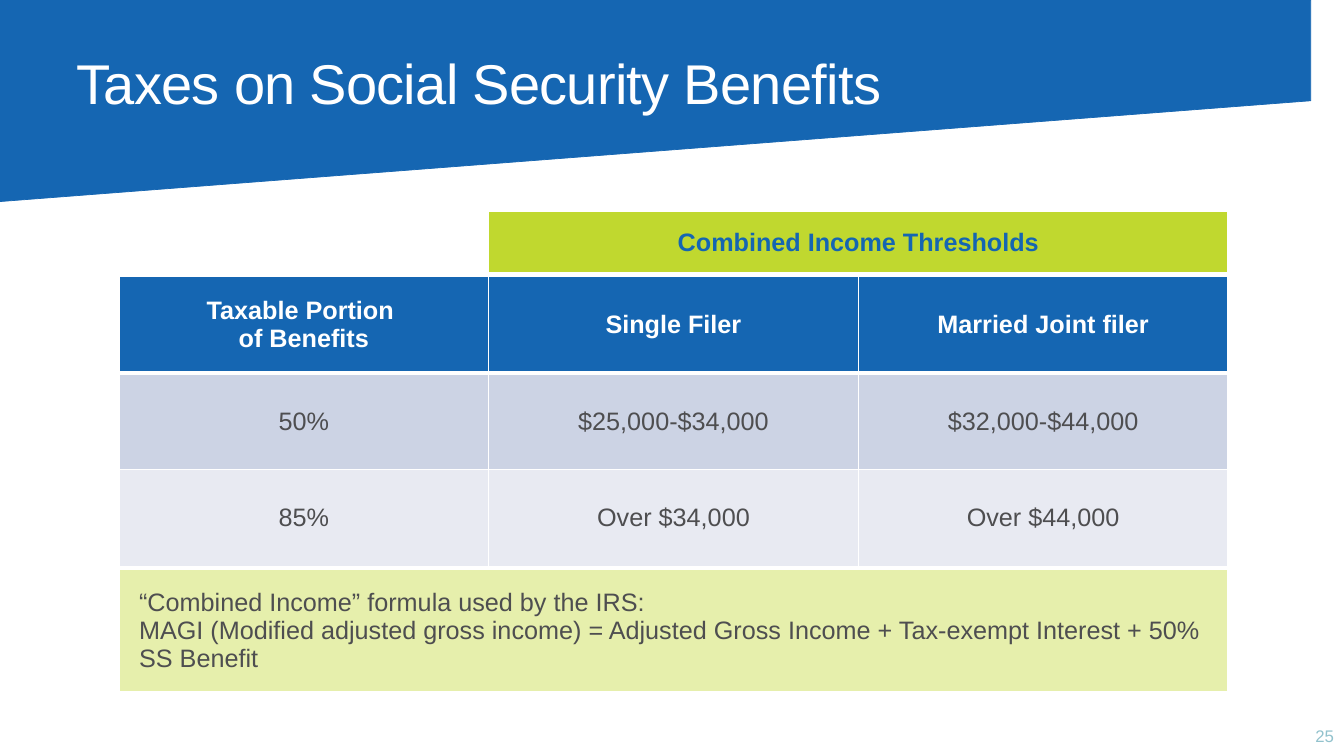
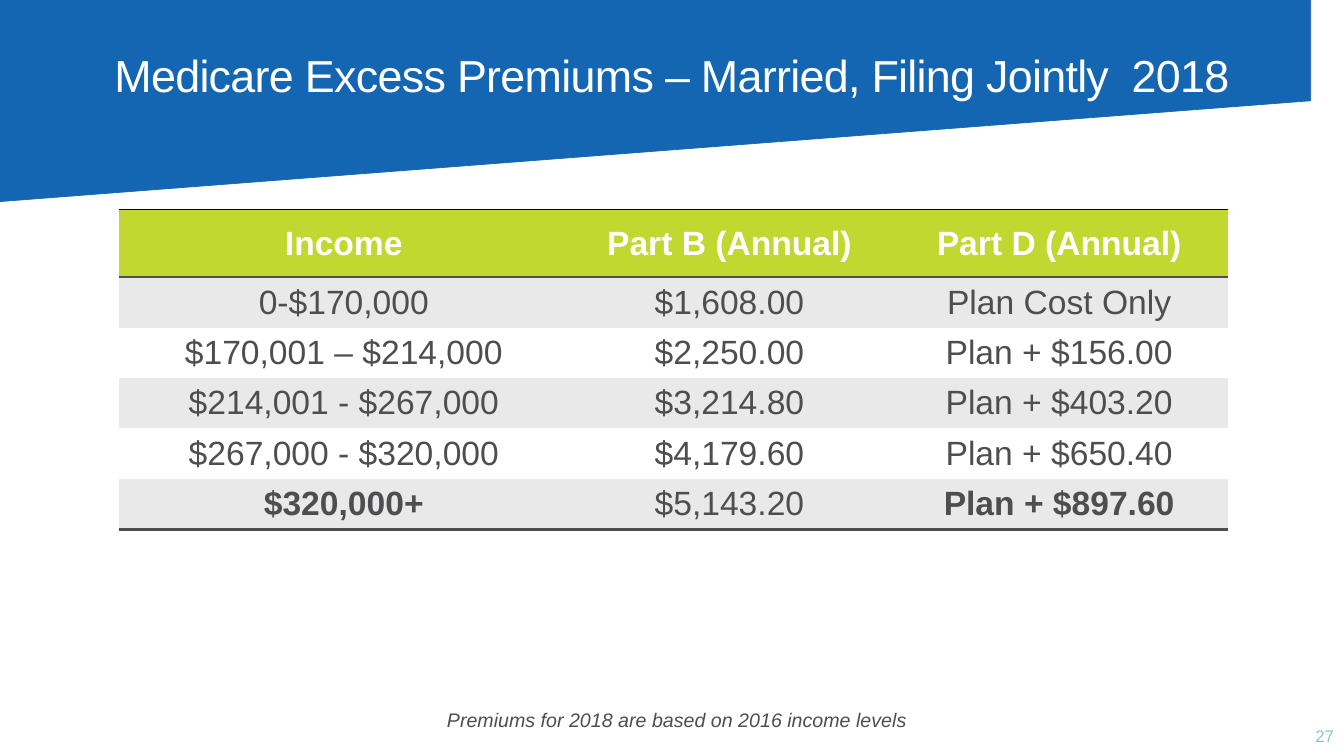
from lxml.etree import SubElement
from pptx import Presentation
from pptx.dml.color import RGBColor
from pptx.enum.text import MSO_ANCHOR as Anchor, MSO_AUTO_SIZE as AutoSize, PP_ALIGN as Align
from pptx.oxml.ns import qn
from pptx.util import Inches, Pt

BLUE = RGBColor(0x15, 0x66, 0xB2)
LIME = RGBColor(0xC0, 0xD8, 0x2F)
PALE_LIME = RGBColor(0xE6, 0xEF, 0xAC)
PALE_BLUE = RGBColor(0xCC, 0xD3, 0xE4)
PALER_BLUE = RGBColor(0xE8, 0xEA, 0xF2)
LIGHT_GRAY = RGBColor(0xE9, 0xE9, 0xE9)
DARK_GRAY = RGBColor(0x4E, 0x4E, 0x50)
PAGE_TEAL = RGBColor(0x92, 0xC2, 0xCD)
WHITE = RGBColor(0xFF, 0xFF, 0xFF)
BLACK = RGBColor(0, 0, 0)

FONT = "Arial"
SLIDE_W, SLIDE_H = 13.33, 7.5
TABLE_LEFT, TABLE_W = 1.18, 11
NO_GRID_STYLE = "{2D5ABB26-0587-4C30-8999-92F81FD0307C}"
WHITE_GRID = {"L": (WHITE, 1), "R": (WHITE, 1), "B": (WHITE, 1)}
WHITE_HEAD = WHITE_GRID | {"T": (WHITE, 1), "B": (WHITE, 3)}


def write(frame, text, size, color, align=Align.CENTER, bold=False, italic=False):
    """Fill a text frame and format all its paragraphs alike."""
    frame.word_wrap = True
    frame.text = text
    for paragraph in frame.paragraphs:
        paragraph.alignment = align
        font = paragraph.font
        font.name, font.size, font.bold, font.italic = FONT, Pt(size), bold, italic
        font.color.rgb = color


def add_text(slide, box, text, size, color, anchor=Anchor.TOP, **look):
    frame = slide.shapes.add_textbox(*map(Inches, box)).text_frame
    frame.vertical_anchor = anchor
    write(frame, text, size, color, **look)


def set_borders(cell, borders):
    """Draw the given sides, a dict of side letter to (colour, points)."""
    properties = cell._tc.get_or_add_tcPr()
    sides = [side for side in "LRTB" if side in borders]
    for position, side in enumerate(sides):
        color, width = borders[side]
        line = SubElement(properties, qn(f"a:ln{side}"), w=str(Pt(width)))
        fill = SubElement(line, qn("a:solidFill"))
        SubElement(fill, qn("a:srgbClr"), val=str(color))
        properties.insert(position, line)


def add_grid(slide, left, top, columns, row_heights, size):
    width, height = sum(columns), sum(row_heights)
    frame = slide.shapes.add_table(len(row_heights), len(columns),
                                   *map(Inches, (left, top, width, height)))
    table = frame.table
    table.first_row = table.horz_banding = False
    table._tbl.tblPr.find(qn("a:tableStyleId")).text = NO_GRID_STYLE
    for column, column_width in zip(table.columns, columns):
        column.width = Inches(column_width)
    for row, row_height in zip(table.rows, row_heights):
        row.height = Inches(row_height)

    def fill_row(index, texts, fill, color, borders, bold_columns=(),
                 align=Align.CENTER, margin=0.1):
        for number, text in enumerate(texts):
            cell = table.cell(index, number)
            cell.fill.solid()
            cell.fill.fore_color.rgb = fill
            cell.vertical_anchor = Anchor.MIDDLE
            cell.margin_left = Inches(margin)
            write(cell.text_frame, text, size, color, align, number in bold_columns)
            set_borders(cell, borders)

    return fill_row


def add_band(slide):
    """Draw the slanted band behind everything else."""
    builder = slide.shapes.build_freeform(0, 0, scale=Inches(1))
    builder.add_line_segments([(SLIDE_W, 0), (SLIDE_W, 1.27), (0, 1.65)])
    band = builder.convert_to_shape()
    band.shadow.inherit = False
    band.fill.solid()
    band.fill.fore_color.rgb = band.line.color.rgb = BLUE
    band.line.width = Pt(0.5)
    slide.shapes._spTree.insert(2, band._element)


def start_slide(deck, title_text, title_box, size, align, page):
    slide = deck.slides.add_slide(deck.slide_layouts[5])
    add_band(slide)
    title = slide.shapes.title
    title.left, title.top, title.width, title.height = map(Inches, title_box)
    frame = title.text_frame
    frame.auto_size = AutoSize.NONE
    frame.vertical_anchor = Anchor.TOP
    write(frame, title_text, size, WHITE, align)
    heading = frame.paragraphs[0]
    heading.line_spacing = 0.9
    heading.runs[0]._r.get_or_add_rPr().set("spc", "-50")
    add_text(slide, (SLIDE_W - 3, 7.1, 3, 0.4), page, 12, PAGE_TEAL,
             Anchor.MIDDLE, align=Align.RIGHT)
    return slide


def add_benefit_taxes(deck):
    slide = start_slide(deck, "Taxes on Social Security Benefits",
                        (0.66, 0.51, 11.96, 0.68), 40, Align.LEFT, "25")
    column = TABLE_W / 3

    fill_row = add_grid(slide, TABLE_LEFT, 2.74, [column] * 3, [0.96] * 3, 18)
    fill_row(0, ["Taxable Portion \vof Benefits", "Single Filer", "Married Joint filer"],
             BLUE, WHITE, WHITE_HEAD, range(3))
    fill_row(1, ["50%", "$25,000-$34,000", "$32,000-$44,000"],
             PALE_BLUE, DARK_GRAY, WHITE_GRID)
    fill_row(2, ["85%", "Over $34,000", "Over $44,000"],
             PALER_BLUE, DARK_GRAY, WHITE_GRID)

    fill_thresholds = add_grid(slide, TABLE_LEFT + column, 2.1, [2 * column], [0.62], 18)
    fill_thresholds(0, ["Combined Income Thresholds"], LIME, BLUE, WHITE_HEAD, [0])

    formula = ("“Combined Income” formula used by the IRS:\n"
               "MAGI (Modified adjusted gross income) = Adjusted Gross Income"
               " + Tax-exempt Interest + 50% SS Benefit")
    fill_formula = add_grid(slide, TABLE_LEFT, 5.65, [TABLE_W], [1.22], 18)
    fill_formula(0, [formula], PALE_LIME, DARK_GRAY, WHITE_HEAD,
                 align=Align.LEFT, margin=0.2)


def add_excess_premiums(deck):
    slide = start_slide(deck, "Medicare Excess Premiums – Married, Filing Jointly  2018",
                        (0, 0.48, SLIDE_W, 0.68), 32, Align.CENTER, "27")
    premiums = [
        ("0-$170,000", "$1,608.00", "Plan Cost Only"),
        ("$170,001 – $214,000", "$2,250.00", "Plan + $156.00"),
        ("$214,001 - $267,000", "$3,214.80", "Plan + $403.20"),
        ("$267,000 - $320,000", "$4,179.60", "Plan + $650.40"),
        ("$320,000+", "$5,143.20", "Plan + $897.60"),
    ]
    rule = {"B": (DARK_GRAY, 2)}
    last = len(premiums)
    fill_row = add_grid(slide, TABLE_LEFT, 2.08, [4.46, 3.19, 3.35],
                        [0.67] + [0.47] * last, 24)
    fill_row(0, ["Income", "Part B (Annual)", "Part D (Annual)"],
             LIME, WHITE, rule | {"T": (BLACK, 1)}, range(3))
    for index, premium in enumerate(premiums, 1):
        is_last = index == last
        fill_row(index, premium, LIGHT_GRAY if index % 2 else WHITE, DARK_GRAY,
                 rule if is_last else {}, (0, 2) if is_last else ())

    add_text(slide, (1.21, 6.97, 11.01, 0.34),
             "Premiums for 2018 are based on 2016 income levels",
             14, DARK_GRAY, italic=True)


def main():
    deck = Presentation()
    deck.slide_width, deck.slide_height = Inches(SLIDE_W), Inches(SLIDE_H)
    add_benefit_taxes(deck)
    add_excess_premiums(deck)
    deck.save("out.pptx")


if __name__ == "__main__":
    main()
